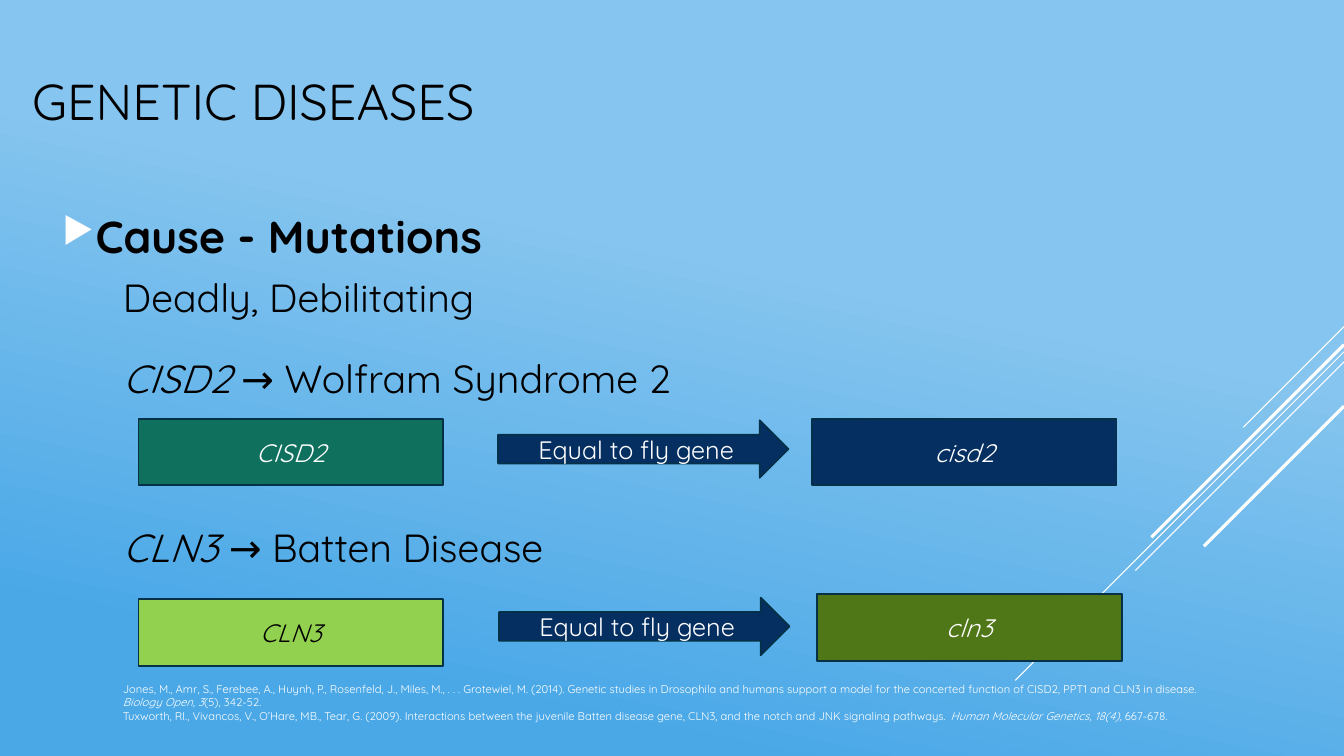
from lxml.etree import SubElement
from pptx import Presentation
from pptx.dml.color import RGBColor
from pptx.enum.shapes import MSO_CONNECTOR, MSO_SHAPE
from pptx.enum.text import MSO_ANCHOR, MSO_AUTO_SIZE, PP_ALIGN
from pptx.oxml.ns import qn
from pptx.util import Inches, Pt

FONT = "Quicksand"
BLACK = RGBColor(0x00, 0x00, 0x00)
WHITE = RGBColor(0xFF, 0xFF, 0xFF)
SKY = RGBColor(0x86, 0xC5, 0xEF)
AZURE = RGBColor(0x4A, 0xA8, 0xE7)
NAVY = RGBColor(0x05, 0x2F, 0x61)
OUTLINE = RGBColor(0x04, 0x31, 0x48)
TEAL = RGBColor(0x0F, 0x70, 0x5D)
LIME = RGBColor(0x92, 0xD0, 0x50)
OLIVE = RGBColor(0x4F, 0x77, 0x17)

STREAKS = [
    (3.24, 12.33, 0.75),
    (3.49, 10.07, 0.75),
    (3.59, 11.26, 0.75),
    (3.42, 11.42, 2.25),
    (4.03, 11.94, 2.25),
]
GENES = [
    ("CISD2", 0.83, 3.08, TEAL, WHITE),
    ("cisd2", 7.51, 3.08, NAVY, WHITE),
    ("CLN3", 0.83, 4.87, LIME, BLACK),
    ("cln3", 7.56, 4.82, OLIVE, WHITE),
]
REFERENCES = [
    [
        ("Jones, M., Amr, S., Ferebee, A., Huynh, P., Rosenfeld, J., Miles, M., . . . "
         "Grotewiel, M. (2014). Genetic studies in Drosophila and humans support a model "
         "for the concerted function of CISD2, PPT1 and CLN3 in disease. ", False),
        ("Biology Open, 3", True),
        ("(5), 342-52.", False),
    ],
    [
        ("Tuxworth, RI., Vivancos, V., O’Hare, MB., Tear, G. (2009). Interactions between "
         "the juvenile Batten disease gene, CLN3, and the notch and JNK signaling "
         "pathways. ", False),
        ("Human Molecular Genetics", True),
        (", ", False),
        ("18(4), ", True),
        ("667-678.", False),
    ],
]


def paint_background(slide):
    """Fill the slide with the slanted blue gradient."""
    fill = slide.background.fill
    fill.gradient()
    fill.gradient_angle = 258
    for stop, color, position in zip(fill.gradient_stops, (SKY, AZURE), (0.37, 0.85)):
        stop.color.rgb = color
        stop.position = position


def add_streak(slide, top, end_left, weight):
    """Draw a diagonal line at 45 degrees from the right edge."""
    right = 13.33
    streak = slide.shapes.add_connector(
        MSO_CONNECTOR.STRAIGHT, Inches(right), Inches(top),
        Inches(end_left), Inches(top + right - end_left))
    streak.line.color.rgb = WHITE
    streak.line.width = Pt(weight)
    SubElement(streak._element.spPr, qn("a:effectLst"))


def style(paragraph, size, color):
    """Set the font shared by all runs of a paragraph."""
    paragraph.font.name = FONT
    paragraph.font.size = Pt(size)
    paragraph.font.color.rgb = color


def add_text(slide, left, top, width, height, paragraphs, size, color=BLACK, middle=False):
    """Add a text box whose paragraphs are lists of (text, italic) runs."""
    box = slide.shapes.add_textbox(Inches(left), Inches(top), Inches(width), Inches(height))
    frame = box.text_frame
    frame.word_wrap = True
    if middle:
        frame.vertical_anchor = MSO_ANCHOR.MIDDLE
    else:
        frame.auto_size = MSO_AUTO_SIZE.SHAPE_TO_FIT_TEXT
    for index, runs in enumerate(paragraphs):
        paragraph = frame.add_paragraph() if index else frame.paragraphs[0]
        for text, italic in runs:
            run = paragraph.add_run()
            run.text = text
            if italic:
                run.font.italic = True
        style(paragraph, size, color)
    return frame


def add_cause(slide):
    """Add the bold heading with its white triangle bullet."""
    cause = slide.shapes.add_textbox(Inches(0.52), Inches(1.79), Inches(4.97), Inches(1.09))
    frame = cause.text_frame
    frame.word_wrap = True
    frame.vertical_anchor = MSO_ANCHOR.MIDDLE
    paragraph = frame.paragraphs[0]
    paragraph.text = "Cause - Mutations"
    paragraph.space_after = Pt(6)
    properties = paragraph._p.get_or_add_pPr()
    properties.set("marL", str(Inches(0.31)))
    properties.set("indent", str(-Inches(0.31)))
    bullet_color = SubElement(properties, qn("a:buClr"))
    SubElement(bullet_color, qn("a:srgbClr"), val=str(WHITE))
    SubElement(properties, qn("a:buSzPct"), val="80000")
    SubElement(properties, qn("a:buChar"), char="▶")
    style(paragraph, 32, BLACK)
    paragraph.font.bold = True


def add_label_shape(slide, preset, left, top, width, height, text, fill, color, italic):
    """Add a filled shape with a centred label."""
    shape = slide.shapes.add_shape(
        preset, Inches(left), Inches(top), Inches(width), Inches(height))
    shape.shadow.inherit = False
    shape.fill.solid()
    shape.fill.fore_color.rgb = fill
    shape.line.color.rgb = OUTLINE
    shape.line.width = Pt(1.25)
    shape.text_frame.vertical_anchor = MSO_ANCHOR.MIDDLE
    paragraph = shape.text_frame.paragraphs[0]
    paragraph.text = text
    paragraph.alignment = PP_ALIGN.CENTER
    style(paragraph, 18, color)
    paragraph.font.italic = italic


def main():
    """Build the genetic diseases slide."""
    presentation = Presentation()
    presentation.slide_width = Inches(13.33)
    presentation.slide_height = Inches(7.5)
    slide = presentation.slides.add_slide(presentation.slide_layouts[6])
    paint_background(slide)
    for streak in STREAKS:
        add_streak(slide, *streak)

    add_text(slide, 0.22, 0.21, 6.45, 1.58, [[("GENETIC DISEASES", False)]], 36, middle=True)
    add_cause(slide)
    add_text(slide, 1.12, 2.66, 6.09, 0.57, [[("Deadly, Debilitating", False)]], 28)
    for gene, disease, top in (("CISD2 ", "→ Wolfram Syndrome 2", 3.47),
                               ("CLN3 ", "→ Batten Disease", 5.14)):
        add_text(slide, 1.12, top, 6.43, 0.57, [[(gene, True), (disease, False)]], 28)

    for gene, left, top, fill, color in GENES:
        add_label_shape(slide, MSO_SHAPE.MATH_MINUS, left, top, 4.11, 2.81,
                        gene, fill, color, True)
    for left, top in ((4.94, 4.17), (4.95, 5.93)):
        add_label_shape(slide, MSO_SHAPE.RIGHT_ARROW, left, top, 2.88, 0.57,
                        "Equal to fly gene", NAVY, WHITE, False)
    add_text(slide, 1.12, 6.72, 11.13, 0.77, REFERENCES, 8, WHITE)
    presentation.save("out.pptx")


if __name__ == "__main__":
    main()
